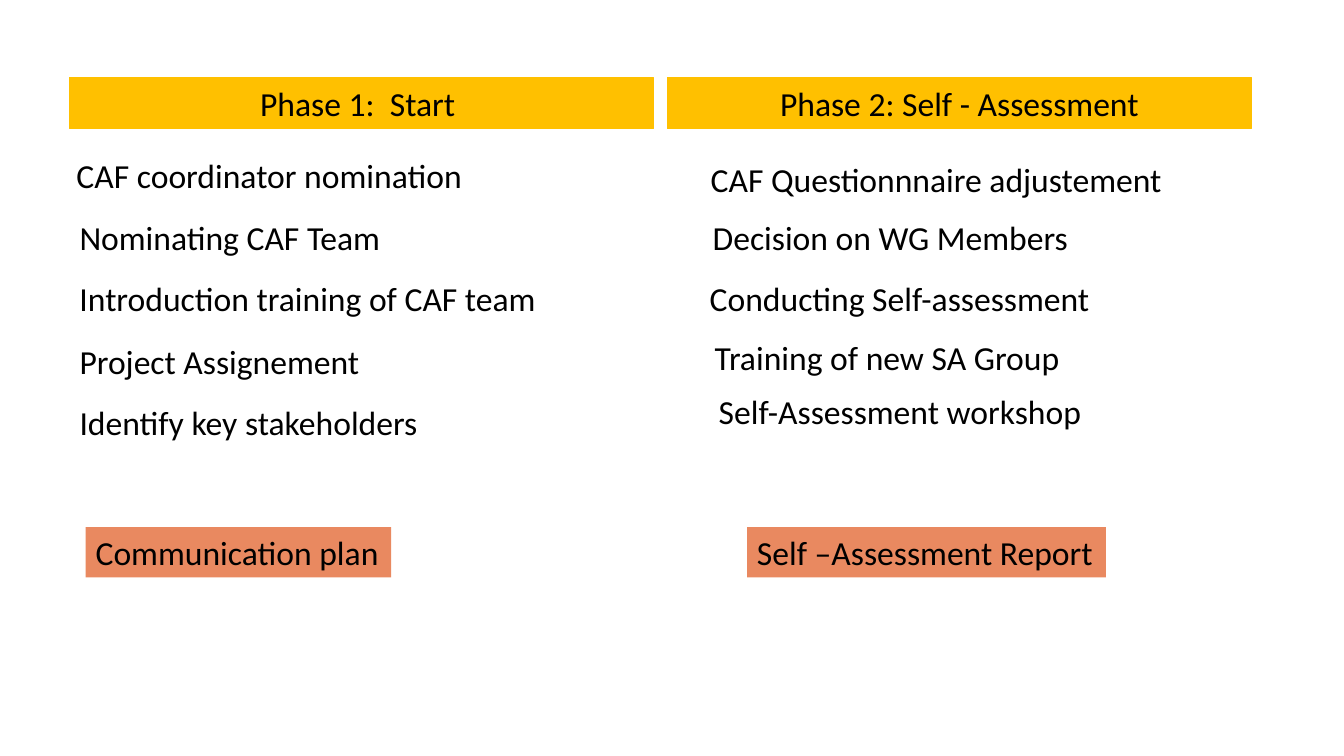
from pptx import Presentation
from pptx.dml.color import RGBColor
from pptx.enum.shapes import MSO_SHAPE as SHAPE
from pptx.enum.text import MSO_ANCHOR as ANCHOR, MSO_AUTO_SIZE as AUTO_SIZE, PP_ALIGN as ALIGN
from pptx.util import Pt

PX = 9144
BLACK = RGBColor(0x00, 0x00, 0x00)
AMBER = RGBColor(0xFF, 0xC0, 0x00)
CORAL = RGBColor(0xE9, 0x89, 0x60)
ROW_HEIGHT = 50

prs = Presentation()
prs.slide_width, prs.slide_height = 1333 * PX, 750 * PX
slide = prs.slides.add_slide(prs.slide_layouts[6])


def write(shape, text):
    paragraph = shape.text_frame.paragraphs[0]
    paragraph.text = text
    font = paragraph.runs[0].font
    font.name, font.size, font.color.rgb = "Calibri", Pt(24), BLACK
    return paragraph


def add_label(text, left, top, width, wrap):
    label = slide.shapes.add_textbox(left * PX, top * PX, width * PX, ROW_HEIGHT * PX)
    label.text_frame.word_wrap = wrap
    label.text_frame.auto_size = AUTO_SIZE.SHAPE_TO_FIT_TEXT
    write(label, text)
    return label


phases = [
    ("Phase 1:  Start ", 69, True, [
        ("CAF coordinator nomination", 66, 149, 581),
        ("Nominating CAF Team", 69, 210, 579),
        ("Introduction training of CAF team", 69, 271, 593),
        ("Project Assignement", 69, 333, 579),
        ("Identify key stakeholders", 69, 394, 579),
    ], ("Communication plan", 85, 523, 303)),
    ("Phase 2: Self - Assessment", 662, False, [
        ("CAF Questionnnaire adjustement", 695, 153, 472),
        ("Decision on WG Members", 697, 210, 376),
        ("Conducting Self-assessment", 694, 271, 402),
        ("Training of new SA Group", 699, 329, 365),
        ("Self-Assessment workshop", 703, 383, 384),
    ], ("Self –Assessment Report", 741, 523, 356)),
]

for heading, left, wrap, steps, output in phases:
    banner = slide.shapes.add_shape(SHAPE.RECTANGLE, left * PX, 77 * PX, 579 * PX, 51 * PX)
    banner.shadow.inherit = False
    banner.fill.solid()
    banner.fill.fore_color.rgb = AMBER
    banner.line.color.rgb = AMBER
    banner.line.width = Pt(0.75)
    banner.text_frame.vertical_anchor = ANCHOR.TOP
    banner.text_frame.word_wrap = True
    title = write(banner, heading)
    title.alignment = ALIGN.CENTER
    title.space_after = Pt(8)

    for step in steps:
        add_label(*step, wrap)

    deliverable = add_label(*output, False)
    deliverable.fill.solid()
    deliverable.fill.fore_color.rgb = CORAL

prs.save("out.pptx")
